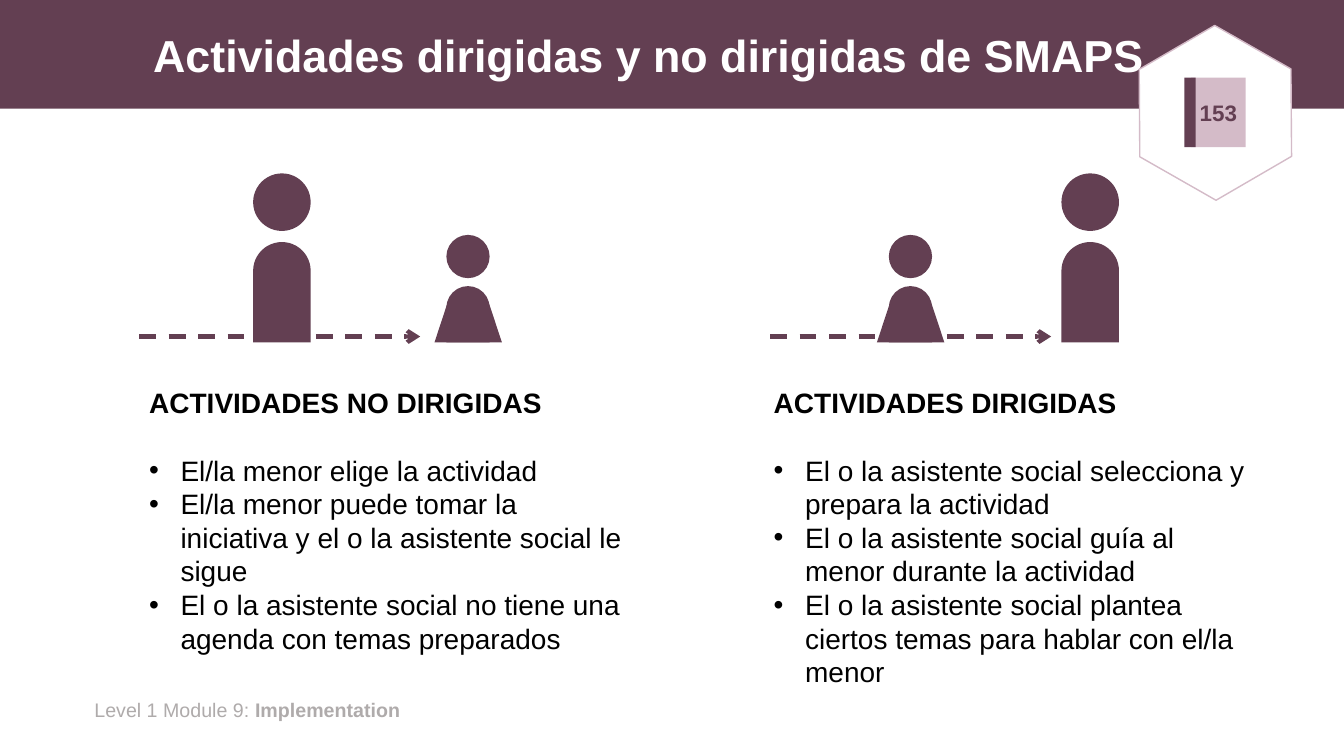
from lxml.etree import SubElement
from pptx import Presentation
from pptx.dml.color import RGBColor
from pptx.enum.dml import MSO_LINE
from pptx.enum.shapes import MSO_CONNECTOR, MSO_SHAPE as Shape
from pptx.enum.text import MSO_ANCHOR, PP_ALIGN
from pptx.oxml.ns import qn
from pptx.util import Cm, Pt

PLUM, PINK, WHITE, BLACK, GREY = "633F52", "D4BBC8", "FFFFFF", "000000", "AFABAB"


def paint(color_format, color):
    """Fill a shape, or colour a font, with a hex colour."""
    if hasattr(color_format, "solid"):
        color_format.solid()
        color_format = color_format.fore_color
    else:
        color_format = color_format.color
    color_format.rgb = RGBColor.from_string(color)


def add_solid(parent, kind, box, color, adjustments=()):
    """Add an unlined preset shape; box is left, top, width, height in cm."""
    shape = parent.shapes.add_shape(kind, *map(Cm, box))
    shape.shadow.inherit = False
    paint(shape.fill, color)
    shape.line.fill.background()
    for index, value in enumerate(adjustments):
        shape.adjustments[index] = value
    return shape


deck = Presentation()
deck.slide_width, deck.slide_height = Cm(33.87), Cm(19.05)
page = deck.slides.add_slide(deck.slide_layouts[6])

# Header and footer
add_solid(page, Shape.RECTANGLE, (0, 0, 33.87, 2.74), PLUM)

footer = page.shapes.add_textbox(Cm(2.13), Cm(17.45), Cm(11.56), Cm(0.86)).text_frame
footer.word_wrap = True
para = footer.paragraphs[0]
para.font.name, para.font.size = "Arial", Pt(14)
paint(para.font, GREY)
for words, bold in (("Level 1 Module 9: ", False), ("Implementation", True)):
    span = para.add_run()
    span.text, span.font.bold = words, bold

title = page.shapes.add_textbox(Cm(3.61), Cm(0.25), Cm(25.73), Cm(2.41)).text_frame
title.word_wrap = True
title.vertical_anchor = MSO_ANCHOR.MIDDLE
para = title.paragraphs[0]
para.text = "Actividades dirigidas y no dirigidas de SMAPS"
para.line_spacing = 0.9
para.font.name, para.font.size, para.font.bold = "Arial", Pt(32), True
paint(para.font, WHITE)

# Two columns: text left, height, heading, points, then child, adult and arrow lefts
columns = (
    (3.51, 6.25, "ACTIVIDADES NO DIRIGIDAS", (
        "El/la menor elige la actividad",
        "El/la menor puede tomar la iniciativa y el o la asistente social le sigue",
        "El o la asistente social no tiene una agenda con temas preparados",
    ), 10.95, 6.38, 3.51),
    (19.25, 7.95, "ACTIVIDADES DIRIGIDAS", (
        "El o la asistente social selecciona y prepara la actividad",
        "El o la asistente social guía al menor durante la actividad",
        "El o la asistente social plantea ciertos temas para hablar con el/la menor",
    ), 22.1, 26.75, 19.41),
)
for left, height, heading, points, child_left, adult_left, arrow_left in columns:
    frame = page.shapes.add_textbox(Cm(left), Cm(9.6), Cm(12.67), Cm(height)).text_frame
    frame.word_wrap = True
    for index, words in enumerate((heading, *points)):
        para = frame.add_paragraph() if index else frame.paragraphs[0]
        para.text = words
        para.line_spacing = Pt(24)
        para.font.name, para.font.size, para.font.bold = "Arial", Pt(20), index == 0
        paint(para.font, BLACK)
        if index == 0:
            para.space_after = Pt(24)
            continue
        properties = para._p.get_or_add_pPr()
        properties.set("marL", str(Cm(0.79)))
        properties.set("indent", str(-Cm(0.79)))
        SubElement(properties, qn("a:buFont"), typeface="Arial")
        SubElement(properties, qn("a:buChar"), char="•")

    child = page.shapes.add_group_shape()
    add_solid(child, Shape.ROUND_2_SAME_RECTANGLE, (child_left + 0.3, 7.21, 1.09, 1.42), PLUM, (0.5, 0))
    add_solid(child, Shape.OVAL, (child_left + 0.3, 5.92, 1.09, 1.09), PLUM)
    add_solid(child, Shape.TRAPEZOID, (child_left, 7.65, 1.7, 0.98), PLUM, (0.33,))

    adult = page.shapes.add_group_shape()
    add_solid(adult, Shape.OVAL, (adult_left, 4.37, 1.45, 1.45), PLUM)
    add_solid(adult, Shape.ROUND_2_SAME_RECTANGLE, (adult_left, 6.1, 1.45, 2.53), PLUM, (0.5, 0))

    arrow = page.shapes.add_connector(
        MSO_CONNECTOR.STRAIGHT, Cm(arrow_left), Cm(8.48), Cm(arrow_left + 7.08), Cm(8.48))
    paint(arrow.line.fill, PLUM)
    arrow.line.width = Pt(3)
    arrow.line.dash_style = MSO_LINE.DASH
    SubElement(arrow.line._get_or_add_ln(), qn("a:tailEnd"), type="arrow")
    SubElement(arrow._element.spPr, qn("a:effectLst"))

# Page badge
badge = page.shapes.add_group_shape()
hexagon = add_solid(badge, Shape.HEXAGON, (28.42, 0.94, 4.42, 3.81), WHITE, (0.29, 1.155))
hexagon.rotation = 29.7
paint(hexagon.line.fill, PINK)
hexagon.line.width = Pt(1)

cover = add_solid(badge, Shape.RECTANGLE, (30.02, 1.96, 1.37, 1.75), PINK).text_frame
cover.word_wrap = False
cover.vertical_anchor = MSO_ANCHOR.MIDDLE
para = cover.paragraphs[0]
para.text = "153"
para.alignment = PP_ALIGN.CENTER
para.font.name, para.font.size, para.font.bold = "Arial", Pt(16), True
paint(para.font, PLUM)
add_solid(badge, Shape.RECTANGLE, (29.85, 1.96, 0.28, 1.75), PLUM)

deck.save("out.pptx")
